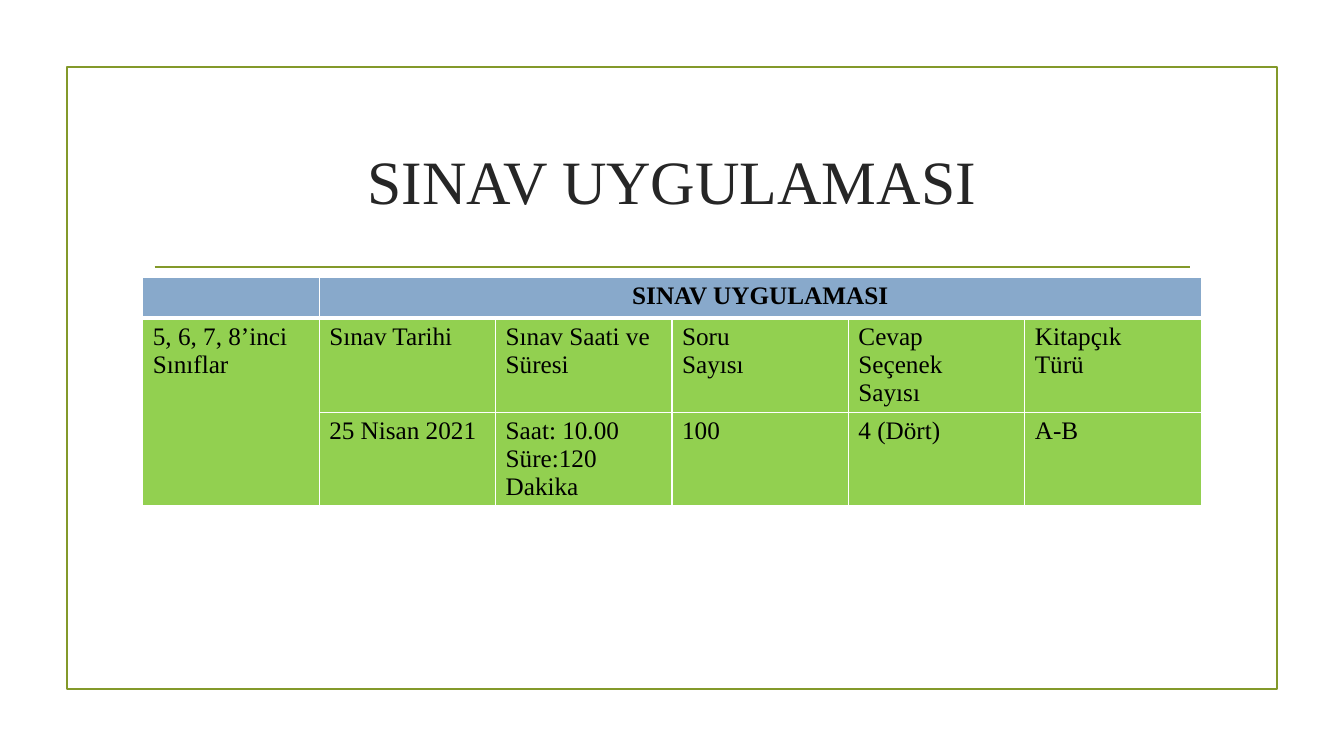
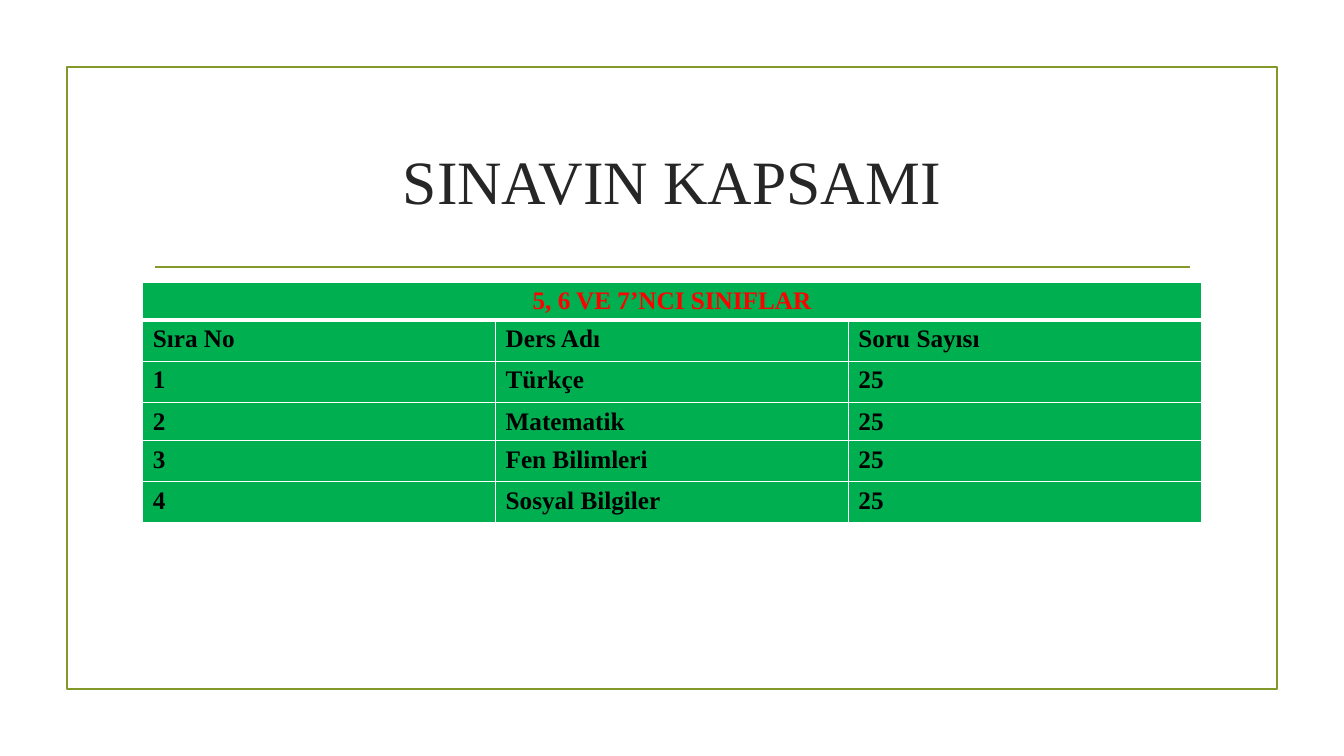
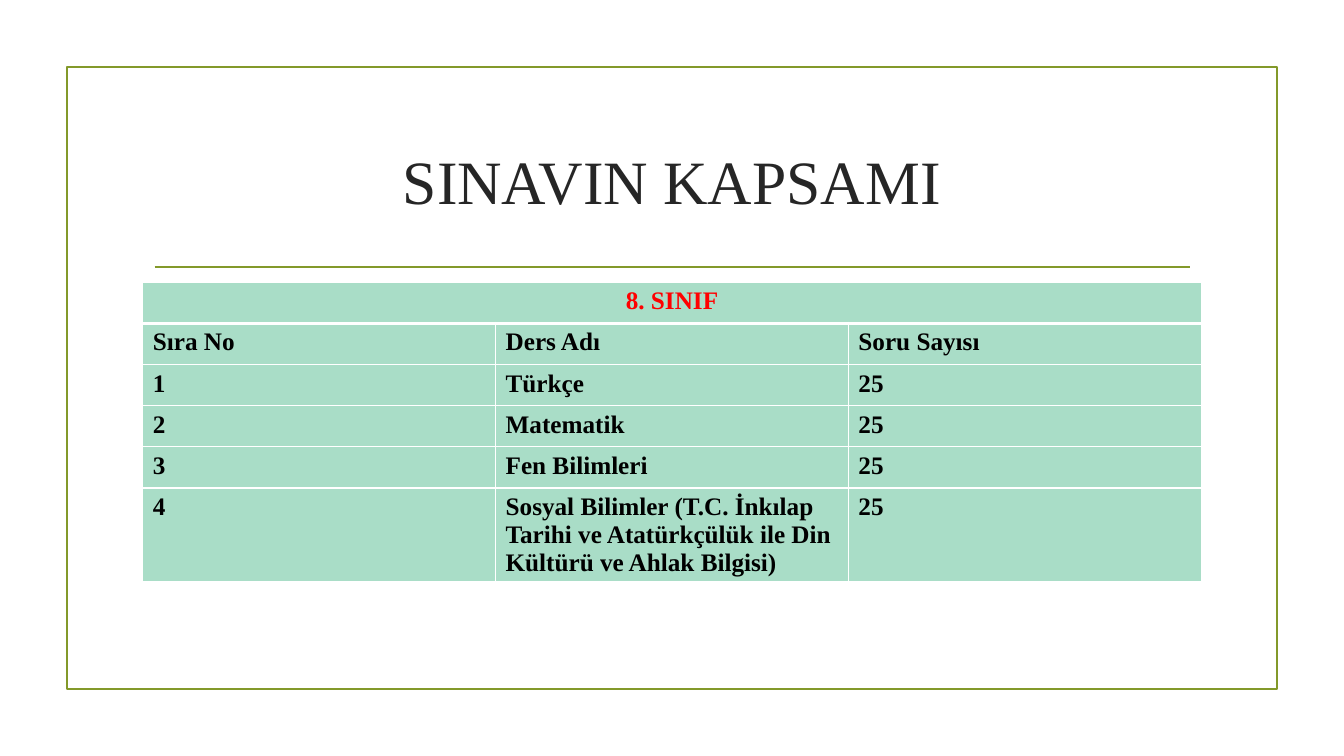
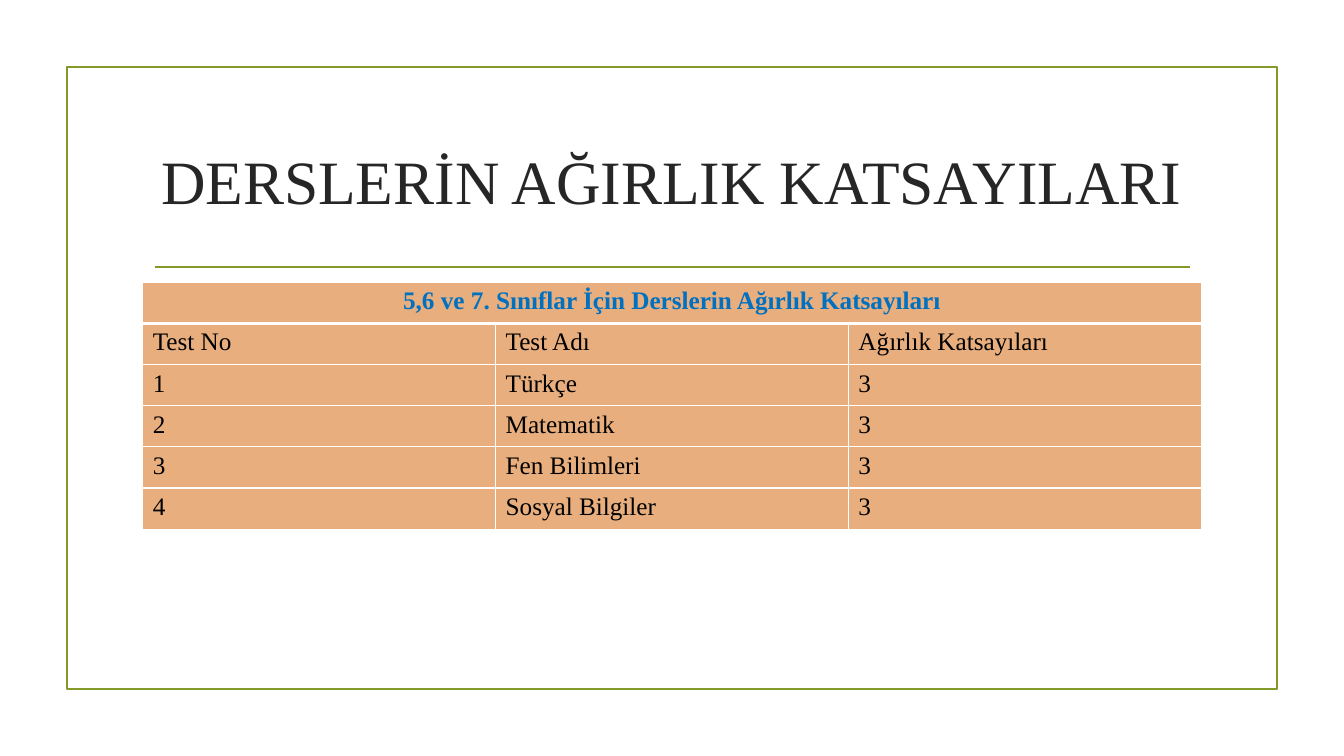
"""Build four slides on the exam schedule, scope and subject weights."""
import pptx
import pptx.dml.color
import pptx.enum.shapes
import pptx.enum.text
import pptx.oxml.ns
import pptx.util
from lxml import etree

FONT = "Times New Roman"
OLIVE, INK, BLACK, WHITE = "83992A", "262626", "000000", "FFFFFF"
RED, BLUE = "FF0000", "0070C0"
ROW = 0.49

deck = pptx.Presentation()
deck.slide_width = pptx.util.Inches(13.333)
deck.slide_height = pptx.util.Inches(7.5)
GRID = deck.slide_height / 9


def rgb(code):
    """Turn a hex string into a colour."""
    return pptx.dml.color.RGBColor.from_string(code)


def place(*cells):
    """Turn grid units (16 columns by 9 rows) into slide lengths."""
    return [round(cell * GRID) for cell in cells]


subjects = ["Türkçe", "Matematik", "Fen Bilimleri", "Sosyal Bilgiler"]
social_sciences = "Sosyal Bilimler (T.C. İnkılap\nTarihi ve Atatürkçülük ile Din\nKültürü ve Ahlak Bilgisi)"
scope_heads = ["Sıra No", "Ders Adı", "Soru Sayısı"]
weight_heads = ["Test No", "Test Adı", "Ağırlık Katsayıları"]

pages = [
    dict(title="SINAV UYGULAMASI", top=3.3, fills=("88A9CB", "92D050"), head_color=BLACK, bold=False,
         heights=[ROW] * 3, merges=[(0, 1, 0, 5), (1, 0, 2, 0)],
         rows=[["", "SINAV UYGULAMASI", "", "", "", ""],
               ["5, 6, 7, 8’inci Sınıflar", "Sınav Tarihi", "Sınav Saati ve\nSüresi", "Soru\nSayısı",
                "Cevap\nSeçenek\nSayısı", "Kitapçık\nTürü"],
               ["", "25 Nisan 2021", "Saat: 10.00\nSüre:120 Dakika", "100", "4 (Dört)", "A-B"]]),
]
for title, heading, head_color, fill, bold, heads, names, value, heights in [
    ("SINAVIN KAPSAMI", "5, 6 VE 7’NCI SINIFLAR", RED, "00B050", True,
     scope_heads, subjects, "25", [0.4, ROW, ROW, 0, ROW, ROW]),
    ("SINAVIN KAPSAMI", "8. SINIF", RED, "A9DDC7", True,
     scope_heads, subjects[:3] + [social_sciences], "25", [ROW] * 6),
    ("DERSLERİN AĞIRLIK KATSAYILARI", "5,6 ve 7. Sınıflar İçin Derslerin Ağırlık Katsayıları", BLUE,
     "E8AE7E", False, weight_heads, subjects, "3", [ROW] * 6),
]:
    numbered = [[str(number), name, value] for number, name in enumerate(names, 1)]
    pages.append(dict(title=title, top=3.36, fills=(fill, fill), head_color=head_color, bold=bold,
                      heights=heights, merges=[(0, 0, 0, 2)],
                      rows=[[heading, "", ""], heads] + numbered))

layout = deck.slide_layouts[5]
slides = [deck.slides.add_slide(layout) for page in pages]

frame = slides[0].shapes.add_shape(pptx.enum.shapes.MSO_SHAPE.RECTANGLE, *place(0.8, 0.8, 14.4, 7.4))
frame.shadow.inherit = False
frame.fill.background()
rule = slides[0].shapes.add_connector(pptx.enum.shapes.MSO_CONNECTOR.STRAIGHT, *place(1.84, 3.18, 14.17, 3.18))
for ornament in (frame, rule):
    ornament.line.color.rgb = rgb(OLIVE)
    ornament.line.width = pptx.util.Pt(1.25)
etree.SubElement(rule.element.spPr, pptx.oxml.ns.qn("a:effectLst"))
for ornament in (frame, rule):
    layout.shapes.element.append(ornament.element)

for slide, page in zip(slides, pages):
    heading = slide.shapes.title
    heading.left, heading.top, heading.width, heading.height = place(1.7, 1.28, 12.6, 1.72)
    heading.text_frame.word_wrap = True
    heading.text_frame.auto_size = pptx.enum.text.MSO_AUTO_SIZE.NONE
    heading.text_frame.vertical_anchor = pptx.enum.text.MSO_ANCHOR.MIDDLE
    line = heading.text_frame.paragraphs[0]
    line.alignment = pptx.enum.text.PP_ALIGN.CENTER
    run = line.add_run()
    run.text = page["title"]
    run.font.name, run.font.size = FONT, pptx.util.Pt(44)
    run.font.color.rgb = rgb(INK)

    rows = page["rows"]
    area = place(1.7, page["top"], 12.6, sum(page["heights"]))
    table = slide.shapes.add_table(len(rows), len(rows[0]), *area).table
    table.horz_banding = False
    for band, height in zip(table.rows, place(*page["heights"])):
        band.height = height
    for top, left, bottom, right in page["merges"]:
        table.cell(top, left).merge(table.cell(bottom, right))

    for row, texts in enumerate(rows):
        is_head = row == 0
        for column, text in enumerate(texts):
            cell = table.cell(row, column)
            properties = cell._tc.get_or_add_tcPr()
            widths = {"L": 1, "R": 1, "T": 3 if row == 1 else 1, "B": 3 if is_head else 1}
            for side, width in widths.items():
                border = etree.SubElement(properties, pptx.oxml.ns.qn("a:ln" + side), w=str(pptx.util.Pt(width)))
                paint = etree.SubElement(border, pptx.oxml.ns.qn("a:solidFill"))
                etree.SubElement(paint, pptx.oxml.ns.qn("a:srgbClr"), val=WHITE)
            cell.fill.solid()
            cell.fill.fore_color.rgb = rgb(page["fills"][0 if is_head else 1])
            if not text:
                continue
            for index, words in enumerate(text.split("\n")):
                line = cell.text_frame.add_paragraph() if index else cell.text_frame.paragraphs[0]
                if is_head:
                    line.alignment = pptx.enum.text.PP_ALIGN.CENTER
                run = line.add_run()
                run.text = words
                run.font.name, run.font.size = FONT, pptx.util.Pt(18)
                run.font.bold = is_head or page["bold"]
                run.font.color.rgb = rgb(page["head_color"] if is_head else BLACK)

deck.save("out.pptx")
